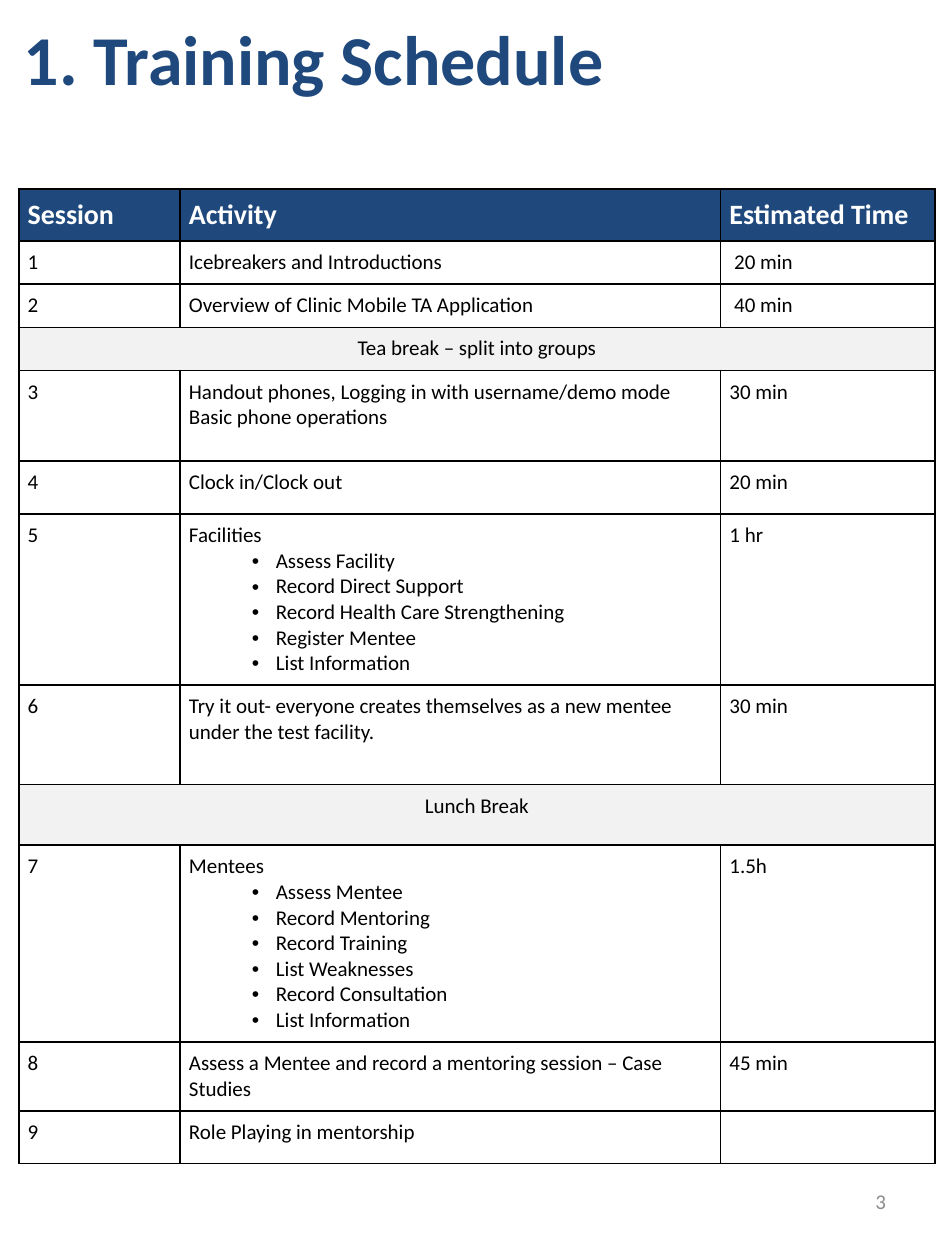
from pptx import Presentation
from pptx.dml.color import RGBColor
from pptx.enum.text import MSO_ANCHOR as Anchor, PP_ALIGN as Align
from pptx.oxml import parse_xml
from pptx.oxml.ns import nsdecls
from pptx.util import Inches, Pt

NAVY = RGBColor(0x1F, 0x49, 0x7D)
WHITE = RGBColor(0xFF, 0xFF, 0xFF)
BLACK = RGBColor(0, 0, 0)
PALE = RGBColor(0xF2, 0xF2, 0xF2)
GREY = RGBColor(0x8C, 0x8C, 0x8C)
FONT = "Calibri"

WIDTH, HEIGHT = 7.5, 10
COLS = [1.28, 4.29, 1.7]
HEAD = ["Session", "Activity", "Estimated Time"]

# Row height, then either one break label or session, activity and time.
# In an activity, the lines after "*" are bullets.
ROWS = [
    (0.34, "1", "Icebreakers and Introductions", " 20 min"),
    (0.34, "2", "Overview of Clinic Mobile TA Application", " 40 min"),
    (0.33, "Tea break – split into groups"),
    (0.72, "3", "Handout phones, Logging in with username/demo mode\n"
                "Basic phone operations", "30 min"),
    (0.42, "4", "Clock in/Clock out", "20 min"),
    (1.35, "5", "Facilities\n*Assess Facility\n*Record Direct Support\n"
                "*Record Health Care Strengthening\n*Register Mentee\n"
                "*List Information", "1 hr"),
    (0.79, "6", "Try it out- everyone creates themselves as a new mentee "
                "under the test facility.", "30 min"),
    (0.48, "Lunch Break"),
    (1.55, "7", "Mentees\n*Assess Mentee\n*Record Mentoring\n"
                "*Record Training\n*List Weaknesses\n*Record Consultation\n"
                "*List Information", "1.5h"),
    (0.54, "8", "Assess a Mentee and record a mentoring session – "
                "Case Studies", "45 min"),
    (0.4, "9", "Role Playing in mentorship", ""),
]


def write(frame, text, size=12, color=BLACK, bold=False, align=Align.LEFT):
    """Fill a text frame, one paragraph a line; "*" starts a bullet."""
    frame.word_wrap = True
    for i, line in enumerate(text.split("\n")):
        para = frame.add_paragraph() if i else frame.paragraphs[0]
        para.alignment = align
        if line.startswith("*"):
            para.level = 1
            props = para._p.get_or_add_pPr()
            props.set("marL", str(Inches(0.69)))
            props.set("indent", str(Inches(-0.19)))
            props.append(parse_xml(
                f'<a:buFont {nsdecls("a")} typeface="Arial"/>'))
            props.append(parse_xml(f'<a:buChar {nsdecls("a")} char="•"/>'))
        run = para.add_run()
        run.text = line.removeprefix("*")
        font = run.font
        font.name, font.size, font.bold = FONT, Pt(size), bold
        font.color.rgb = color


def label(slide, box, text, **style):
    """Place a line of text in the middle of a box."""
    shape = slide.shapes.add_textbox(*map(Inches, box))
    shape.text_frame.vertical_anchor = Anchor.MIDDLE
    write(shape.text_frame, text, **style)


def frame_cell(cell, fill=None):
    """Give a cell its margins, black edges and fill."""
    cell.margin_left = cell.margin_right = Inches(0.07)
    cell.margin_top = cell.margin_bottom = Inches(0.07)
    props = cell._tc.get_or_add_tcPr()
    for side in "LRTB":
        props.append(parse_xml(
            f'<a:ln{side} {nsdecls("a")} w="{Pt(1)}"><a:solidFill>'
            f'<a:srgbClr val="{BLACK}"/></a:solidFill></a:ln{side}>'))
    if fill is None:
        cell.fill.background()
    else:
        cell.fill.solid()
        cell.fill.fore_color.rgb = fill


def schedule(slide, left, top):
    """Draw the timetable with its header and full-width breaks."""
    rows = [(0.41, *HEAD), *ROWS]
    tall = sum(row[0] for row in rows)
    table = slide.shapes.add_table(
        len(rows), len(COLS), Inches(left), Inches(top),
        Inches(sum(COLS)), Inches(tall)).table
    table.first_row = table.horz_banding = False
    for col, width in zip(table.columns, COLS):
        col.width = Inches(width)

    for r, (height, *texts) in enumerate(rows):
        table.rows[r].height = Inches(height)
        cells = list(table.rows[r].cells)
        pause = len(texts) == 1
        fill = NAVY if r == 0 else PALE if pause else None
        for cell in cells:
            frame_cell(cell, fill)
        if pause:
            cells[0].merge(cells[-1])
        style = dict(size=16, color=WHITE, bold=True) if r == 0 else {}
        for cell, text in zip(cells, texts):
            write(cell.text_frame, text,
                  align=Align.CENTER if pause else Align.LEFT, **style)


def main():
    deck = Presentation()
    deck.slide_width, deck.slide_height = Inches(WIDTH), Inches(HEIGHT)
    slide = deck.slides.add_slide(deck.slide_layouts[6])
    schedule(slide, 0.15, 0.15 * HEIGHT)
    # Page number
    label(slide, (5.38, 9.27, 1.75, 0.53), "3", color=GREY,
          align=Align.RIGHT)
    # Title
    label(slide, (-0.05, 0, 5.08, 0.92), "1. Training Schedule", size=40,
          color=NAVY, bold=True, align=Align.CENTER)
    deck.save("out.pptx")


if __name__ == "__main__":
    main()
